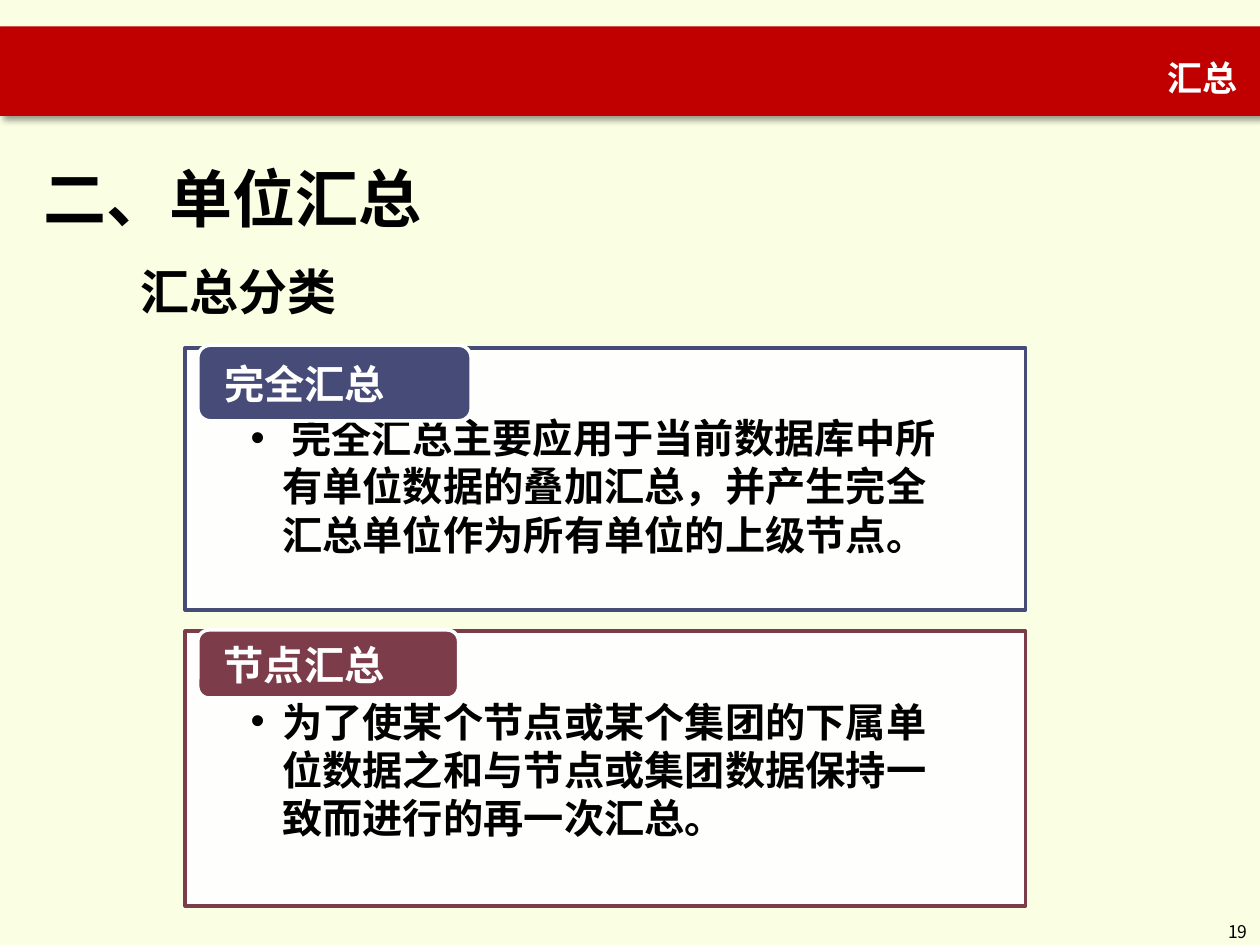
from lxml.etree import SubElement
from pptx import Presentation
from pptx.dml.color import RGBColor
from pptx.enum.shapes import MSO_SHAPE as Preset
from pptx.enum.text import MSO_ANCHOR as Anchor, PP_ALIGN as Align
from pptx.oxml import parse_xml
from pptx.oxml.ns import nsdecls, qn
from pptx.util import Inches, Pt


def color(value):
    return RGBColor.from_string(value)


def write(shape, text, size, font="Arial", ink="000000", bold=True, align=Align.LEFT,
          anchor=Anchor.TOP, insets=(1, 0.5, 1, 0.5), wrap=True, spacing=None, bullet=None):
    frame = shape.text_frame
    frame.word_wrap = wrap
    frame.vertical_anchor = anchor
    left, top, right, bottom = insets
    frame.margin_left, frame.margin_right = int(left * column), int(right * column)
    frame.margin_top, frame.margin_bottom = int(top * row), int(bottom * row)
    paragraph = frame.paragraphs[0]
    paragraph.alignment = align
    if spacing:
        paragraph.line_spacing = spacing
    if bullet:
        properties = paragraph._p.get_or_add_pPr()
        properties.set("marL", str(int(2.5 * column)))
        properties.set("indent", str(int(-2.5 * column)))
        SubElement(properties, qn("a:buFont")).set("typeface", "Arial")
        SubElement(properties, qn("a:buChar")).set("char", bullet)
    run = paragraph.add_run()
    run.text = text
    run.font.size, run.font.bold, run.font.name = Pt(size), bold, font
    run.font.color.rgb = color(ink)
    return run


deck = Presentation()
deck.slide_width, deck.slide_height = Inches(10), Inches(7.5)
column, row = deck.slide_width / 100, deck.slide_height / 75
slide = deck.slides.add_slide(deck.slide_layouts[6])
slide.background.fill.solid()
slide.background.fill.fore_color.rgb = color("FAFEE2")
shapes = slide.shapes

banner = shapes.add_shape(Preset.RECTANGLE, 0, int(2.1 * row), int(100 * column), int(7.1 * row))
banner.fill.solid()
banner.fill.fore_color.rgb = color("C00000")
banner.line.fill.background()

CJK = "Noto Sans CJK SC"
labels = [
    ("汇总", 23.9, 3.3, 75.3, 4.7,
     dict(size=20, font=CJK, ink="FFFFFF", align=Align.RIGHT, spacing=1.2)),
    ("19", 94.2, 72.6, 5.8, 2.4, dict(size=10, font=CJK, bold=False, align=Align.RIGHT)),
    ("二、单位汇总", 2.5, 12.2, 32.4, 7.1, dict(size=36, wrap=False)),
    ("汇总分类", 10.2, 20.3, 17.8, 5.7, dict(size=28, wrap=False)),
]
runs = []
for text, x, y, width, height, style in labels:
    label = shapes.add_textbox(int(x * column), int(y * row), int(width * column), int(height * row))
    runs.append(write(label, text, **style))

shadow = (f'<a:effectLst {nsdecls("a")}><a:outerShdw blurRad="50800" dist="38100" dir="2700000">'
          '<a:srgbClr val="000000"><a:alpha val="40000"/></a:srgbClr></a:outerShdw></a:effectLst>')
banner._element.spPr.append(parse_xml(shadow))
runs[0]._r.rPr.find(qn("a:solidFill")).addnext(parse_xml(shadow))

categories = [
    ("完全汇总", " 完全汇总主要应用于当前数据库中所有单位数据的叠加汇总，并产生完全汇总单位作为所有单位的上级节点。",
     "474B78", 27.6, 20.8, 27.4, 21.7, 6),
    ("节点汇总", "为了使某个节点或某个集团的下属单位数据之和与节点或集团数据保持一致而进行的再一次汇总。",
     "7D3C4A", 50.1, 21.8, 50, 20.7, 5.4),
]
for name, detail, accent, card_y, card_height, tab_y, tab_width, tab_height in categories:
    card = shapes.add_shape(Preset.RECTANGLE, int(14.7 * column), int(card_y * row),
                            int(66.7 * column), int(card_height * row))
    tab = shapes.add_shape(Preset.ROUNDED_RECTANGLE, int(15.7 * column), int(tab_y * row),
                           int(tab_width * column), int(tab_height * row))
    for part, fill, outline in ((card, "FFFFFF", accent), (tab, accent, "FFFFFF")):
        part.shadow.inherit = False
        part.fill.solid()
        part.fill.fore_color.rgb = color(fill)
        part.line.color.rgb = color(outline)
        part.line.width = Pt(2)
    card_fill = card._element.spPr.find(qn("a:solidFill"))
    SubElement(card_fill[0], qn("a:alpha")).set("val", "90000")
    write(card, detail, 23, font="DejaVu Sans", insets=(5.2, 5.2, 5.2, 1.8), bullet="•")
    write(tab, name, 23, font="DejaVu Sans", ink="FFFFFF", anchor=Anchor.MIDDLE,
          insets=(1.8, 0, 1.8, 0))

deck.save("out.pptx")
